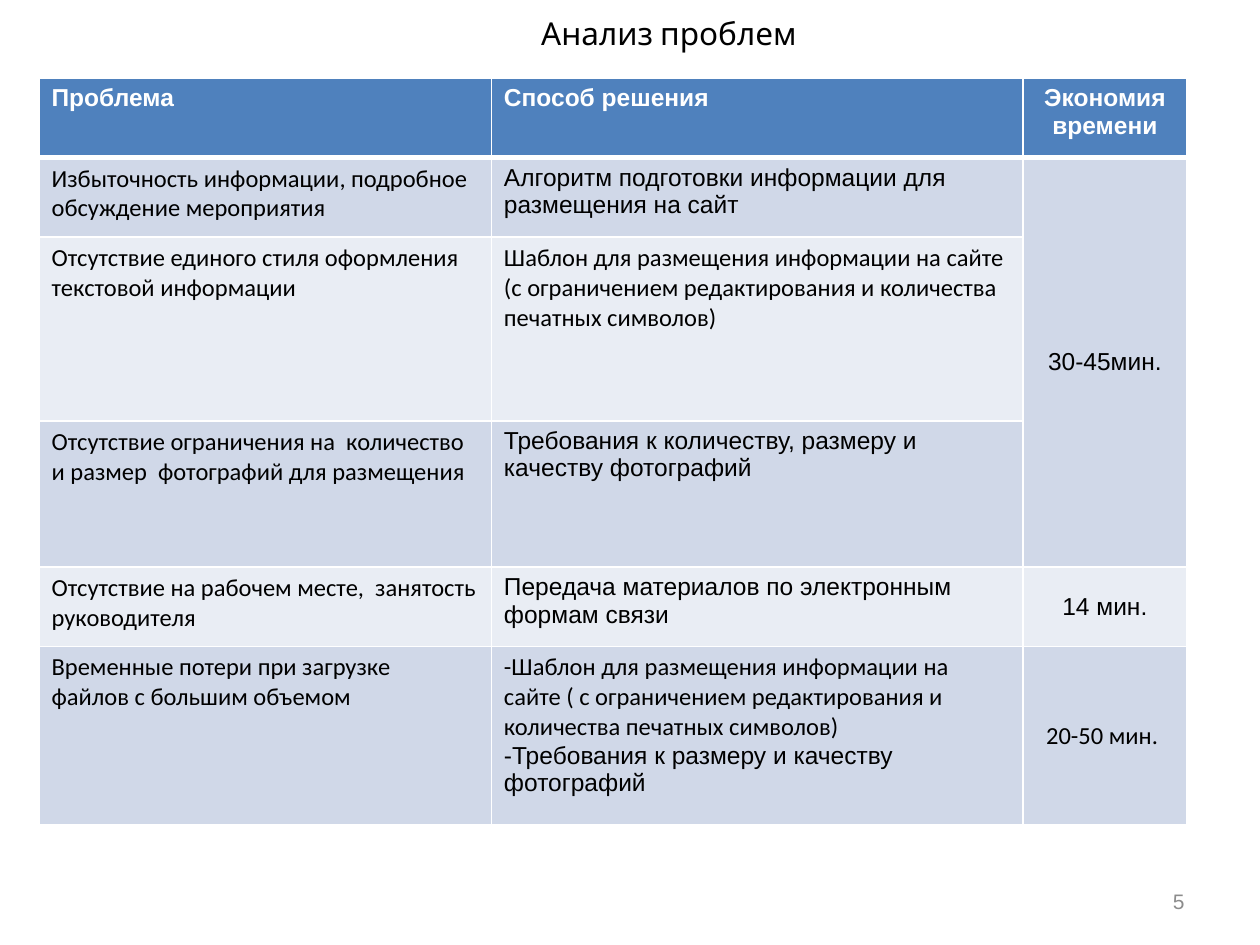
from lxml.etree import SubElement
from pptx import Presentation
from pptx.dml.color import RGBColor
from pptx.enum.text import MSO_ANCHOR, PP_ALIGN
from pptx.oxml.ns import qn
from pptx.util import Inches, Pt

WHITE = RGBColor(0xFF, 0xFF, 0xFF)
BLACK = RGBColor(0x00, 0x00, 0x00)
GRAY = RGBColor(0x8C, 0x8C, 0x8C)
HEADER_BLUE = RGBColor(0x4F, 0x81, 0xBD)
BAND_DARK = RGBColor(0xD0, 0xD8, 0xE8)
BAND_LIGHT = RGBColor(0xE9, 0xED, 0xF4)

ARIAL = "Arial"
CALIBRI = "Calibri"
TITLE_FONT = "Cabin"

COLUMN_WIDTHS = [3.59, 4.22, 1.3]
ROW_HEIGHTS = [0.63, 0.63, 1.46, 1.16, 0.63, 1.42]
TIME_COLUMN = 2
TEMPLATE_SOLUTION = "с ограничением редактирования и количества печатных символов)"

PROBLEMS = [
    [
        [("Проблема", ARIAL)],
        [("Способ решения", ARIAL)],
        [("Экономия времени", ARIAL)],
    ],
    [
        [("Избыточность информации, подробное обсуждение мероприятия", CALIBRI)],
        [("Алгоритм подготовки информации для размещения на сайт", ARIAL)],
        [("30-45мин.", ARIAL)],
    ],
    [
        [("Отсутствие единого стиля оформления текстовой информации", CALIBRI)],
        [("Шаблон для размещения информации на сайте (" + TEMPLATE_SOLUTION, CALIBRI)],
        [],
    ],
    [
        [("Отсутствие ограничения на  количество \nи размер  фотографий для размещения", CALIBRI)],
        [("Требования к количеству, размеру и качеству фотографий", ARIAL)],
        [],
    ],
    [
        [("Отсутствие на рабочем месте,  занятость руководителя", CALIBRI)],
        [("Передача материалов по электронным формам связи", ARIAL)],
        [("14 мин.", ARIAL)],
    ],
    [
        [("Временные потери при загрузке  файлов с большим объемом", CALIBRI)],
        [
            ("-Шаблон для размещения информации на сайте ( " + TEMPLATE_SOLUTION, CALIBRI),
            ("-Требования к размеру и качеству фотографий", ARIAL),
        ],
        [("20-50 мин. ", CALIBRI)],
    ],
]


class SlideBuilder:
    """Holds the text style and the current slide, and adds its elements."""

    def __init__(self, slide, size=14):
        self.slide = slide
        self.size = size

    def add_text(self, frame, paragraphs, color=BLACK, size=None, bold=False, align=PP_ALIGN.LEFT):
        for index, (text, font_name) in enumerate(paragraphs):
            paragraph = frame.add_paragraph() if index else frame.paragraphs[0]
            paragraph.alignment = align
            for line_number, line in enumerate(text.split("\n")):
                if line_number:
                    paragraph.add_line_break()
                run = paragraph.add_run()
                run.text = line
                run.font.name = font_name
                run.font.size = Pt(size or self.size)
                run.font.bold = bold
                run.font.color.rgb = color

    def title(self, text, left, top, width, height):
        title = self.slide.shapes.title
        title.left, title.top = Inches(left), Inches(top)
        title.width, title.height = Inches(width), Inches(height)
        title.text_frame.vertical_anchor = MSO_ANCHOR.TOP
        self.add_text(title.text_frame, [(text, TITLE_FONT)], size=18, align=PP_ALIGN.CENTER)

    def page_number(self, text, left, top, width, height):
        box = self.slide.shapes.add_textbox(
            Inches(left), Inches(top), Inches(width), Inches(height)
        )
        box.text_frame.word_wrap = True
        box.text_frame.vertical_anchor = MSO_ANCHOR.MIDDLE
        self.add_text(box.text_frame, [(text, ARIAL)], GRAY, 12, align=PP_ALIGN.RIGHT)

    def borders(self, cell, top=1, bottom=1):
        properties = cell._tc.get_or_add_tcPr()
        widths = {"a:lnL": 1, "a:lnR": 1, "a:lnT": top, "a:lnB": bottom}
        for position, (tag, width) in enumerate(widths.items()):
            line = SubElement(properties, qn(tag), w=str(Pt(width)))
            fill = SubElement(line, qn("a:solidFill"))
            SubElement(fill, qn("a:srgbClr"), val=str(WHITE))
            properties.insert(position, line)

    def cell(self, cell, paragraphs, row, column):
        is_header = row == 0
        is_time = column == TIME_COLUMN
        band = BAND_DARK if row % 2 else BAND_LIGHT
        cell.fill.solid()
        cell.fill.fore_color.rgb = HEADER_BLUE if is_header else band
        self.borders(cell, top=3 if row == 1 else 1, bottom=3 if is_header else 1)
        cell.vertical_anchor = MSO_ANCHOR.MIDDLE if is_time and not is_header else MSO_ANCHOR.TOP
        self.add_text(
            cell.text_frame,
            paragraphs,
            WHITE if is_header else BLACK,
            bold=is_header,
            align=PP_ALIGN.CENTER if is_time else PP_ALIGN.LEFT,
        )

    def table(self, rows, left, top):
        table = self.slide.shapes.add_table(
            len(rows), len(COLUMN_WIDTHS), Inches(left), Inches(top),
            Inches(sum(COLUMN_WIDTHS)), Inches(sum(ROW_HEIGHTS)),
        ).table
        for column, width in zip(table.columns, COLUMN_WIDTHS):
            column.width = Inches(width)
        for row, height in zip(table.rows, ROW_HEIGHTS):
            row.height = Inches(height)
        for row, contents in enumerate(rows):
            for column, paragraphs in enumerate(contents):
                self.cell(table.cell(row, column), paragraphs, row, column)
        table.cell(1, TIME_COLUMN).merge(table.cell(3, TIME_COLUMN))


def main():
    presentation = Presentation()
    presentation.slide_width = Inches(10)
    presentation.slide_height = Inches(7.5)
    title_only = presentation.slide_layouts[5]
    builder = SlideBuilder(presentation.slides.add_slide(title_only))
    builder.table(PROBLEMS, 0.31, 0.62)
    builder.page_number("5", 7.17, 6.95, 2.33, 0.4)
    builder.title("Анализ проблем", 3.75, 0.06, 3.12, 0.4)
    presentation.save("out.pptx")


if __name__ == "__main__":
    main()
